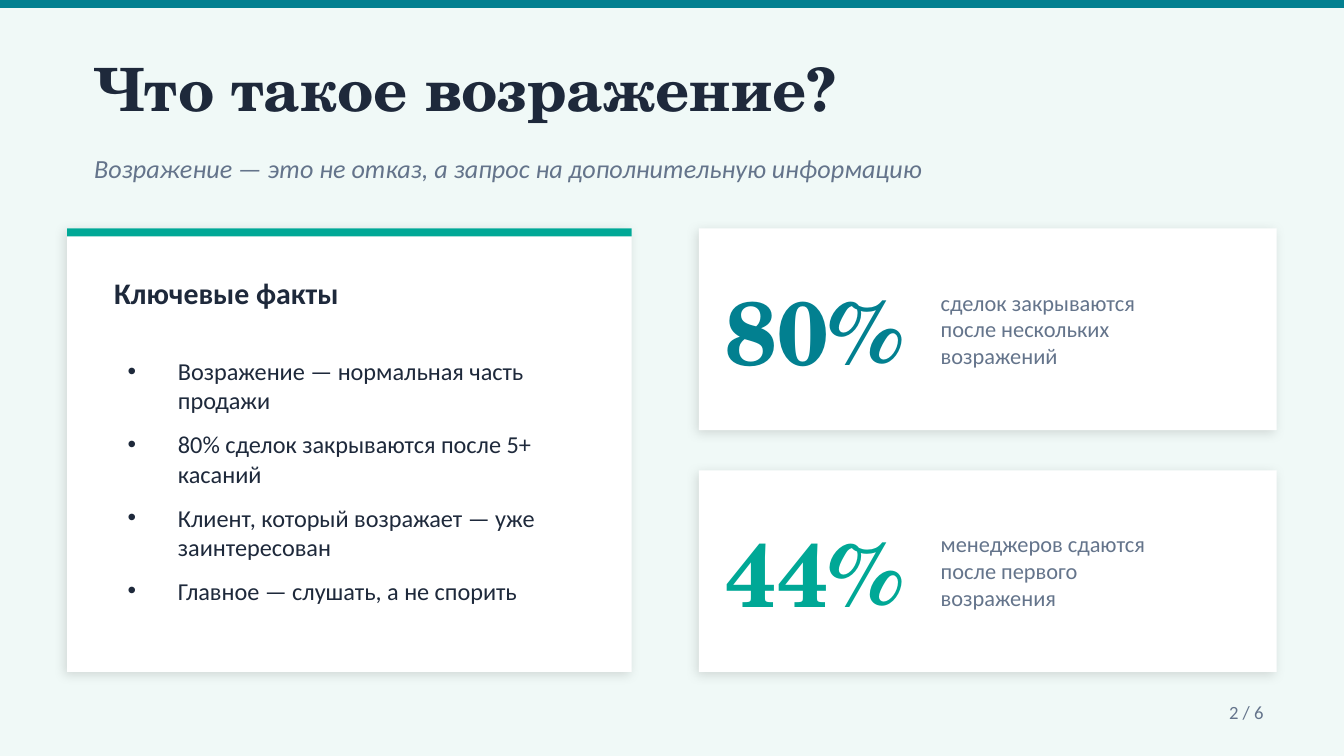
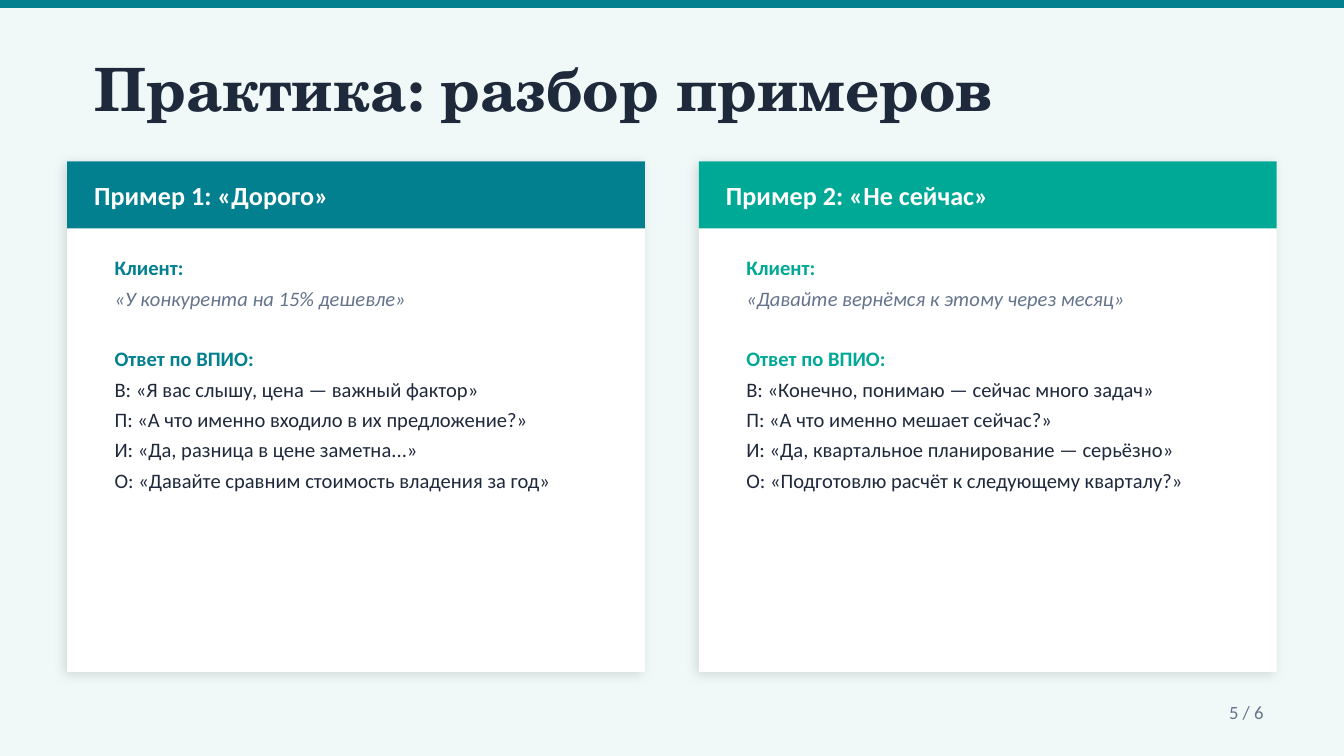
import collections

import lxml.etree
import pptx
import pptx.dml.color
import pptx.enum.shapes
import pptx.enum.text
import pptx.oxml.ns
import pptx.util

Cm = pptx.util.Cm
Pt = pptx.util.Pt
qn = pptx.oxml.ns.qn
ANCHOR = pptx.enum.text.MSO_ANCHOR
ALIGN = pptx.enum.text.PP_ALIGN

COLORS = {
    "background": "F0F9F7",
    "teal": "028090",
    "green": "00A896",
    "ink": "1E293B",
    "muted": "64748B",
    "white": "FFFFFF",
    "shadow": "000000",
}
SERIF, SANS = "TeX Gyre Schola", "Calibri"
TOTAL_PAGES = 6

# Lengths below are in centimetres.
SLIDE_W, SLIDE_H = 25.4, 14.29
MARGIN, BOTTOM = 1.27, 12.7
CARD_W = 10.92
RIGHT_X = SLIDE_W - MARGIN - CARD_W
STRIPE_H = 0.15


class Box(collections.namedtuple("Box", "x y w h")):
    def inner(self, dx, dy, w, h):
        """Return a box placed relative to this one's top left corner."""
        return Box(self.x + dx, self.y + dy, w, h)

    def lengths(self):
        return [Cm(value) for value in self]


def rgb(name):
    return pptx.dml.color.RGBColor.from_string(COLORS[name])


def add_rect(slide, box, color):
    sp = slide.shapes.add_shape(
        pptx.enum.shapes.MSO_SHAPE.RECTANGLE, *box.lengths())
    sp.shadow.inherit = False
    sp.fill.solid()
    sp.fill.fore_color.rgb = rgb(color)
    sp.line.fill.background()
    return sp


def add_card(slide, box):
    """Add a white panel with a soft shadow."""
    sp = add_rect(slide, box, "white")
    effects = sp.element.spPr.find(qn("a:effectLst"))
    shadow = lxml.etree.SubElement(
        effects, qn("a:outerShdw"), blurRad=str(Pt(6)), dist=str(Pt(2)),
        dir=str(135 * 60000), algn="bl", rotWithShape="0")
    color = lxml.etree.SubElement(shadow, qn("a:srgbClr"), val=COLORS["shadow"])
    lxml.etree.SubElement(color, qn("a:alpha"), val="12000")


def set_frame(tf, anchor=ANCHOR.MIDDLE, inset=0):
    tf.word_wrap = True
    tf.auto_size = pptx.enum.text.MSO_AUTO_SIZE.NONE
    tf.vertical_anchor = anchor
    if inset is not None:
        tf.margin_left = tf.margin_right = Cm(inset)
        tf.margin_top = tf.margin_bottom = Cm(inset)
    return tf


def add_text(slide, box, inset=0):
    return set_frame(slide.shapes.add_textbox(*box.lengths()).text_frame,
                     inset=inset)


def place_placeholder(ph, box, **frame):
    """Move a placeholder into the box and in front of the shapes so far."""
    ph.left, ph.top, ph.width, ph.height = box.lengths()
    ph.element.getparent().append(ph.element)
    return set_frame(ph.text_frame, **frame)


def add_line(tf, text, size, color, font=SANS, bold=False, italic=False,
             align=ALIGN.LEFT, before=0, after=0, bullet=None, indent=0):
    p = tf.paragraphs[0]
    if p.runs:
        p = tf.add_paragraph()
    pPr = p._p.get_or_add_pPr()
    pPr.set("marL", str(Cm(indent)))
    pPr.set("indent", str(-Cm(indent)))
    if bullet:
        lxml.etree.SubElement(pPr, qn("a:buChar"), char=bullet)
    else:
        lxml.etree.SubElement(pPr, qn("a:buNone"))
    p.alignment = align
    p.space_before, p.space_after = Pt(before), Pt(after)
    r = p.add_run()
    r.text = text
    r.font.name, r.font.size = font, Pt(size)
    r.font.bold, r.font.italic = bold, italic
    r.font.color.rgb = rgb(color)


def add_page(prs, layout, title, number):
    """Add a slide with the top band, the title and the page number."""
    slide = prs.slides.add_slide(prs.slide_layouts.get_by_name(layout))
    add_rect(slide, Box(0, 0, SLIDE_W, STRIPE_H), "teal")
    tf = place_placeholder(slide.shapes.title, Box(1.78, 0.76, 20.32, 1.78))
    add_line(tf, title, 32, "ink", SERIF, bold=True)
    tf = add_text(slide, Box(21.59, 13.08, 2.54, 0.76), inset=None)
    add_line(tf, f"{number} / {TOTAL_PAGES}", 10, "muted", align=ALIGN.RIGHT)
    return slide


def add_facts(slide, box, heading, facts):
    add_card(slide, box)
    add_rect(slide, box.inner(0, 0, box.w, STRIPE_H), "green")
    tf = add_text(slide, box.inner(0.89, 0.64, 8.89, 1.14))
    add_line(tf, heading, 16, "ink", bold=True)
    tf = place_placeholder(slide.placeholders[1],
                           box.inner(0.89, 2.29, 8.89, 5.59),
                           anchor=ANCHOR.TOP, inset=None)
    for fact in facts:
        add_line(tf, fact, 13, "ink", after=8, bullet="•", indent=0.95)


def add_stat(slide, box, value, color, lines):
    add_card(slide, box)
    tf = add_text(slide, box.inner(0.51, 0.13, 3.81, 3.56))
    add_line(tf, value, 48, color, SERIF, bold=True)
    tf = add_text(slide, box.inner(4.57, 0.25, 5.84, 3.3))
    for line in lines:
        add_line(tf, line, 12, "muted")


def add_example(slide, box, body, color, heading, objection, answers):
    add_card(slide, box)
    header = box.inner(0, 0, box.w, 1.27)
    add_rect(slide, header, color)
    tf = add_text(slide, header.inner(0.51, 0, 9.65, header.h))
    add_line(tf, heading, 14, "white", bold=True)
    tf = place_placeholder(body, box.inner(0.64, 1.65, 9.65, 7.62),
                           anchor=ANCHOR.TOP, inset=None)
    add_line(tf, "Клиент:", 11, color, bold=True, after=3)
    add_line(tf, objection, 11, "muted", italic=True, after=3)
    add_line(tf, "Ответ по ВПИО:", 11, color, bold=True, before=16.4, after=3)
    for answer in answers:
        add_line(tf, answer, 11, "ink", after=3)


def build_definition(prs):
    slide = add_page(prs, "Title and Content", "Что такое возражение?", 2)
    tf = add_text(slide, Box(1.78, 2.54, 20.32, 1.27))
    add_line(tf, "Возражение — это не отказ, а запрос на дополнительную информацию",
             14, "muted", italic=True)
    top, stat_h = 4.32, 3.81
    add_facts(slide, Box(MARGIN, top, 10.67, BOTTOM - top), "Ключевые факты", [
        "Возражение — нормальная часть продажи",
        "80% сделок закрываются после 5+ касаний",
        "Клиент, который возражает — уже заинтересован",
        "Главное — слушать, а не спорить",
    ])
    add_stat(slide, Box(RIGHT_X, top, CARD_W, stat_h), "80%", "teal",
             ["сделок закрываются", "после нескольких", "возражений"])
    add_stat(slide, Box(RIGHT_X, BOTTOM - stat_h, CARD_W, stat_h), "44%", "green",
             ["менеджеров сдаются", "после первого", "возражения"])


def build_practice(prs):
    slide = add_page(prs, "Two Content", "Практика: разбор примеров", 5)
    examples = [
        ("teal", "Пример 1: «Дорого»", "«У конкурента на 15% дешевле»", [
            "В: «Я вас слышу, цена — важный фактор»",
            "П: «А что именно входило в их предложение?»",
            "И: «Да, разница в цене заметна...»",
            "О: «Давайте сравним стоимость владения за год»",
        ]),
        ("green", "Пример 2: «Не сейчас»", "«Давайте вернёмся к этому через месяц»", [
            "В: «Конечно, понимаю — сейчас много задач»",
            "П: «А что именно мешает сейчас?»",
            "И: «Да, квартальное планирование — серьёзно»",
            "О: «Подготовлю расчёт к следующему кварталу?»",
        ]),
    ]
    top = 3.05
    for i, (x, example) in enumerate(zip((MARGIN, RIGHT_X), examples), 1):
        add_example(slide, Box(x, top, CARD_W, BOTTOM - top),
                    slide.placeholders[i], *example)


def main():
    prs = pptx.Presentation()
    prs.slide_width, prs.slide_height = Cm(SLIDE_W), Cm(SLIDE_H)
    fill = prs.slide_master.background.fill
    fill.solid()
    fill.fore_color.rgb = rgb("background")
    build_definition(prs)
    build_practice(prs)
    prs.save("out.pptx")


if __name__ == "__main__":
    main()
